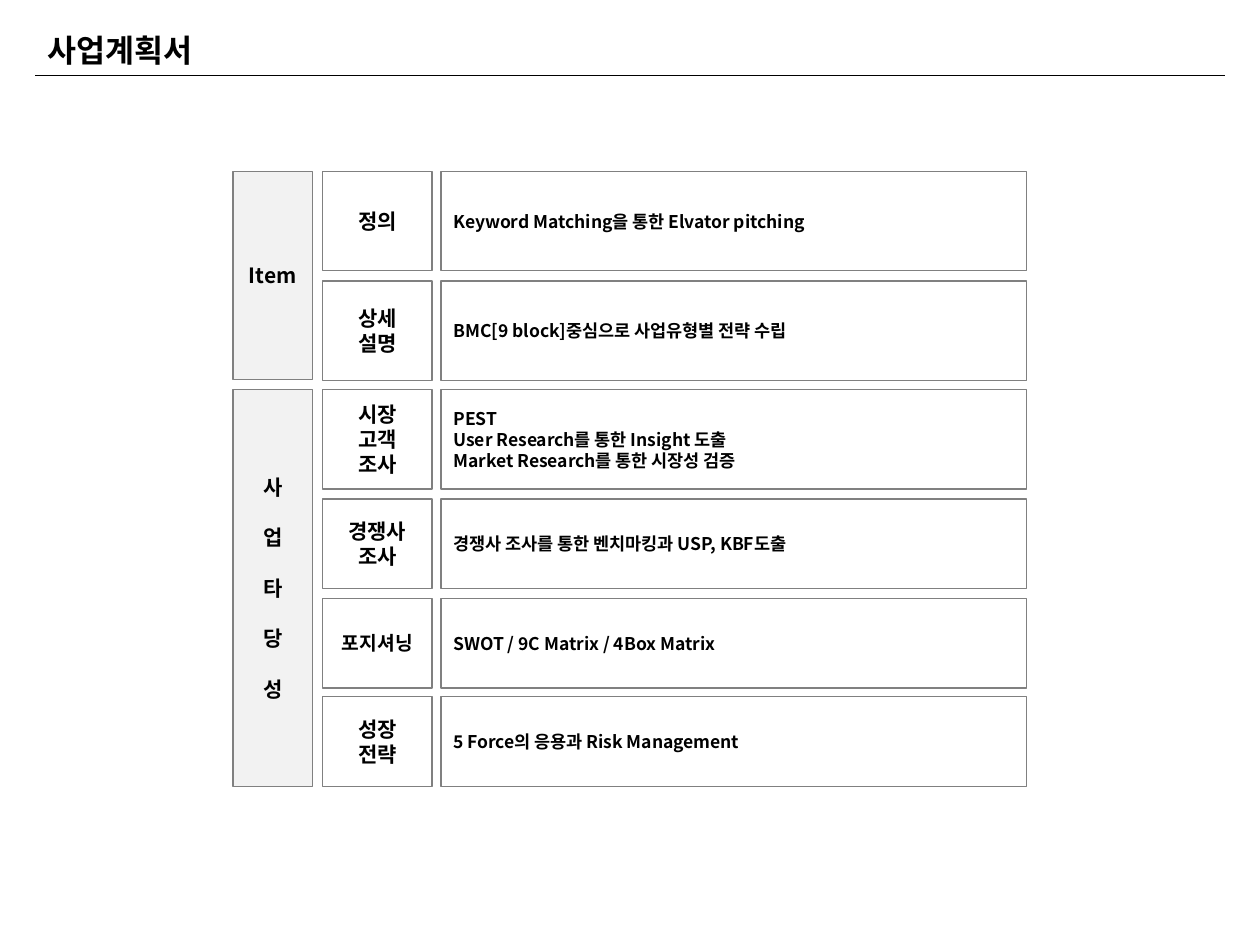
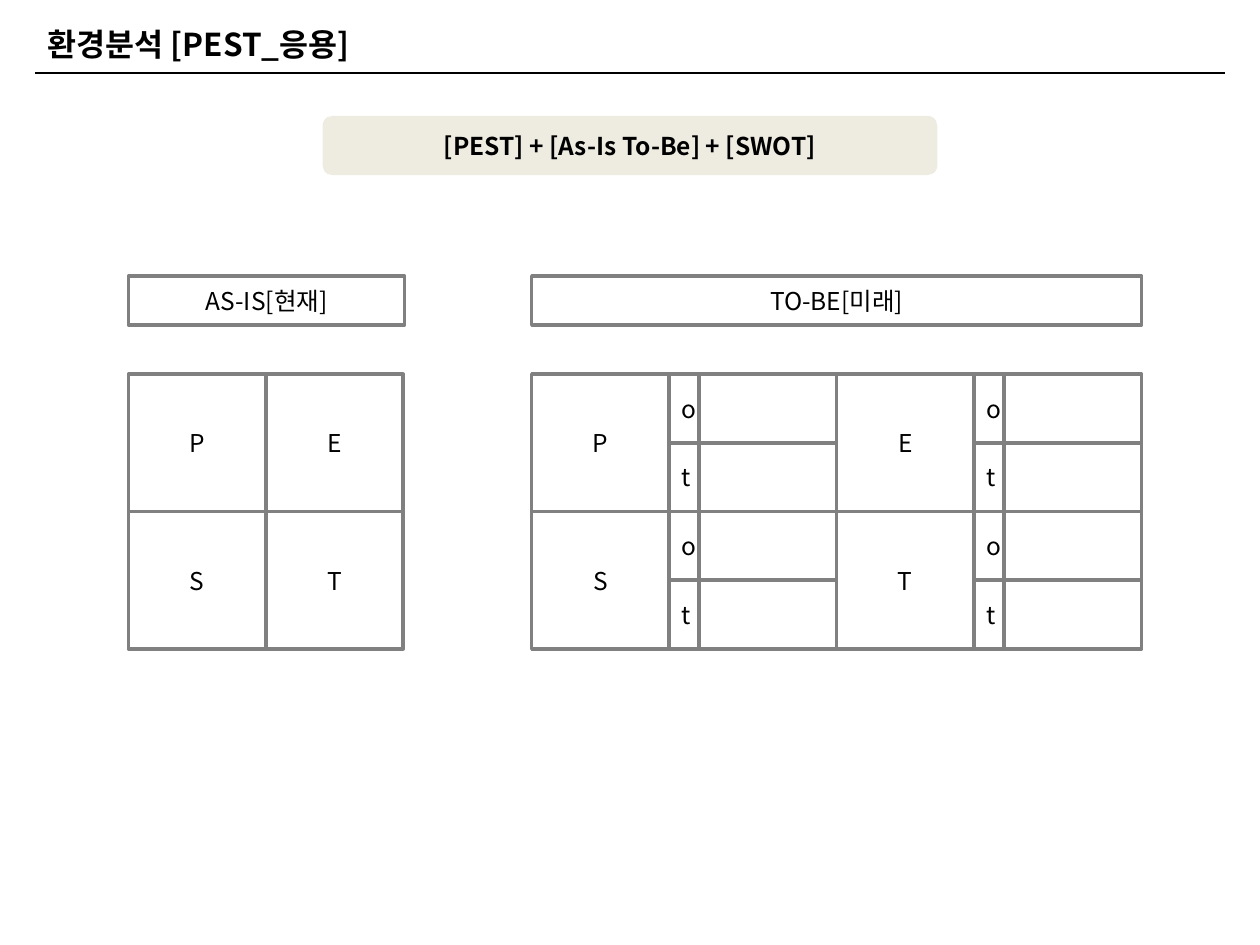
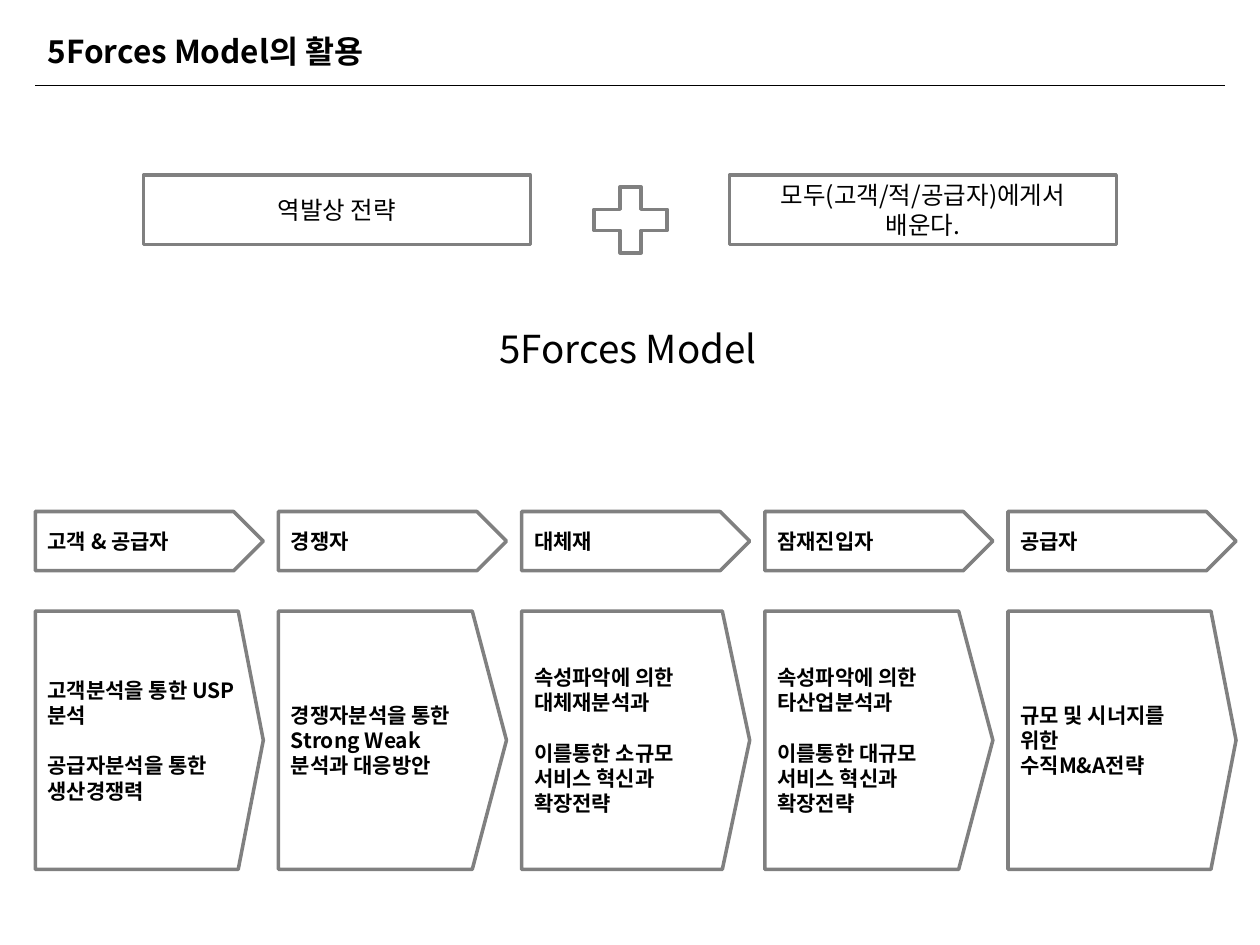
from lxml import etree
from pptx import Presentation
from pptx.dml.color import RGBColor
from pptx.enum.shapes import MSO_CONNECTOR, MSO_SHAPE
from pptx.enum.text import MSO_ANCHOR, MSO_AUTO_SIZE, PP_ALIGN
from pptx.oxml.ns import qn
from pptx.util import Inches, Pt

LEFT, CENTER = PP_ALIGN.LEFT, PP_ALIGN.CENTER
MIDDLE = MSO_ANCHOR.MIDDLE
RECT, ROUNDED = MSO_SHAPE.RECTANGLE, MSO_SHAPE.ROUNDED_RECTANGLE
ARROW, PLUS = MSO_SHAPE.PENTAGON, MSO_SHAPE.MATH_PLUS
STRAIGHT = MSO_CONNECTOR.STRAIGHT

FONT = "Noto Sans CJK KR"
COLORS = {
    "text": "000000",
    "border": "808080",
    "white": "FFFFFF",
    "group": "F2F2F2",
    "banner": "EEECE1",
}
BLOCK_GAP = 14.4  # points, one line of 12 pt text


def write_text(shape, text, size=14, bold=False, align=CENTER):
    """Each line is a paragraph; a double line break opens a spaced block."""
    frame = shape.text_frame
    frame.word_wrap = True
    frame.auto_size = MSO_AUTO_SIZE.NONE
    frame.vertical_anchor = MIDDLE
    lines = [(line, block > 0 and row == 0)
             for block, part in enumerate(text.split("\n\n"))
             for row, line in enumerate(part.split("\n"))]
    for index, (line, spaced) in enumerate(lines):
        para = frame.add_paragraph() if index else frame.paragraphs[0]
        para.alignment = align
        if spaced:
            para.space_before = Pt(BLOCK_GAP)
        span = para.add_run()
        span.text = line
        span.font.size = Pt(size)
        span.font.bold = bold
        span.font.color.rgb = RGBColor.from_string(COLORS["text"])
        span.font.name = FONT
        east_asian = etree.SubElement(span.font._element, qn("a:ea"))
        east_asian.set("typeface", FONT)


def add_box(page, left, top, width, height, text="", kind=RECT,
            fill="white", line=2, **text_format):
    box = page.shapes.add_shape(kind, Inches(left), Inches(top),
                                Inches(width), Inches(height))
    box.shadow.inherit = False
    if fill:
        box.fill.solid()
        box.fill.fore_color.rgb = RGBColor.from_string(COLORS[fill])
    else:
        box.fill.background()
    if line:
        box.line.width = Pt(line)
        box.line.color.rgb = RGBColor.from_string(COLORS["border"])
    else:
        box.line.fill.background()
    if text:
        write_text(box, text, **text_format)
    return box


deck = Presentation()
deck.slide_width, deck.slide_height = Inches(10), Inches(7.5)

# Titles and the rule below them: text, top, height, rule position
headings = [
    ("사업계획서", 0.24, 0.31, 0.6),
    ("환경분석 [PEST_응용]", 0.11, 0.47, 0.58),
    ("5Forces Model의 활용", 0.13, 0.55, 0.68),
]
pages = []
for text, top, height, rule_top in headings:
    page = deck.slides.add_slide(deck.slide_layouts[5])
    title = page.shapes.title
    title.left, title.top = Inches(0.28), Inches(top)
    title.width, title.height = Inches(9.45), Inches(height)
    write_text(title, text, size=18, bold=True, align=LEFT)
    rule = page.shapes.add_connector(STRAIGHT, Inches(0.28), Inches(rule_top),
                                     Inches(9.72), Inches(rule_top))
    rule.line.width = Pt(0.75)
    rule.line.color.rgb = RGBColor.from_string(COLORS["text"])
    etree.SubElement(rule._element.spPr, qn("a:effectLst"))
    pages.append(page)
plan_page, pest_page, forces_page = pages

# Business plan: groups on the left, topics and methods in rows
groups = [
    (1.36, 1.65, "Item"),
    (3.09, 3.15, "사\n\n업\n\n타\n\n당\n\n성"),
]
for top, height, text in groups:
    add_box(plan_page, 1.85, top, 0.63, height, text, fill="group",
            line=0.75, size=12, bold=True)

topics = [
    (1.36, 0.79, "정의", 12, "Keyword Matching을 통한 Elvator pitching"),
    (2.23, 0.79, "상세\n설명", 12, "BMC[9 block]중심으로 사업유형별 전략 수립"),
    (3.09, 0.79, "시장\n고객\n조사", 12,
     "PEST\nUser Research를 통한 Insight 도출\n"
     "Market Research를 통한 시장성 검증"),
    (3.96, 0.71, "경쟁사\n조사", 12,
     "경쟁사 조사를 통한 벤치마킹과 USP, KBF도출"),
    (4.75, 0.71, "포지셔닝", 11, "SWOT / 9C Matrix / 4Box Matrix"),
    (5.53, 0.71, "성장\n전략", 12, "5 Force의 응용과 Risk Management"),
]
for top, height, topic, topic_size, method in topics:
    add_box(plan_page, 2.56, top, 0.87, height, topic, fill=None,
            line=0.75, size=topic_size, bold=True)
    add_box(plan_page, 3.5, top, 4.65, height, method, fill=None,
            line=0.75, size=10, bold=True, align=LEFT)

# PEST: banner and column headings
add_box(pest_page, 2.56, 0.92, 4.88, 0.47, "[PEST] + [As-Is To-Be] + [SWOT]",
        kind=ROUNDED, fill="banner", line=0, bold=True)
add_box(pest_page, 1.02, 2.19, 2.19, 0.39, "AS-IS[현재]")
add_box(pest_page, 4.22, 2.19, 4.84, 0.39, "TO-BE[미래]")

# PEST: present factors, and future factors with opportunity and threat
cell, tag_width = 1.09, 0.24
half = cell / 2
for index, factor in enumerate("PEST"):
    row, column = divmod(index, 2)
    top = 2.97 + row * cell
    add_box(pest_page, 1.02 + column * cell, top, cell, cell, factor)
    left = 4.22 + column * (2 * cell + tag_width)
    add_box(pest_page, left, top, cell, cell, factor)
    for step, tag in enumerate("ot"):
        tag_top = top + step * half
        add_box(pest_page, left + cell + tag_width, tag_top, cell, half)
        add_box(pest_page, left + cell, tag_top, tag_width, half, tag)

# Five forces: the two ideas and the model name
add_box(forces_page, 1.14, 1.39, 3.07, 0.55, "역발상 전략")
add_box(forces_page, 4.61, 1.39, 0.79, 0.71, kind=PLUS)
add_box(forces_page, 5.79, 1.39, 3.07, 0.55,
        "모두(고객/적/공급자)에게서\n배운다.")
add_box(forces_page, 2.11, 2.49, 5.75, 0.55, "5Forces Model", line=0, size=22)

# Five forces: one heading arrow and one strategy arrow each
forces = [
    ("고객 & 공급자", 0.11,
     "고객분석을 통한 USP분석\n\n공급자분석을 통한\n생산경쟁력"),
    ("경쟁자", 0.15, "경쟁자분석을 통한\nStrong Weak 분석과 대응방안"),
    ("대체재", 0.12,
     "속성파악에 의한 대체재분석과\n\n이를통한 소규모 서비스 혁신과 확장전략"),
    ("잠재진입자", 0.15,
     "속성파악에 의한 타산업분석과\n\n이를통한 대규모 서비스 혁신과 확장전략"),
    ("공급자", 0.11, "규모 및 시너지를\n위한\n수직M&A전략"),
]
for index, (force, point, strategy) in enumerate(forces):
    left = 0.28 + index * 1.93
    add_box(forces_page, left, 4.06, 1.81, 0.47, force, kind=ARROW,
            size=12, bold=True, align=LEFT)
    arrow = add_box(forces_page, left, 4.85, 1.81, 2.05, strategy, kind=ARROW,
                    size=12, bold=True, align=LEFT)
    arrow.adjustments[0] = point

deck.save("out.pptx")
